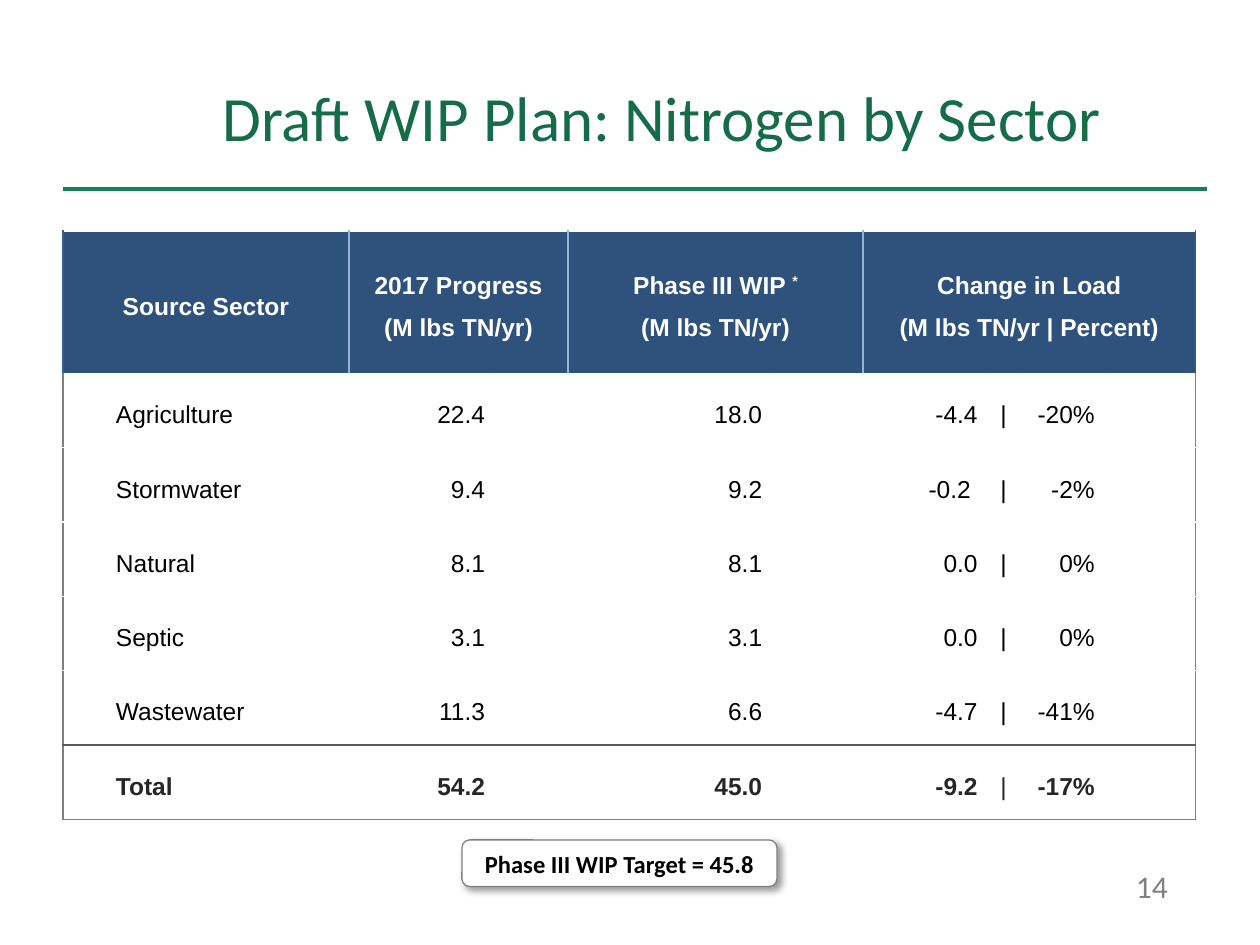
from lxml import etree
from pptx import Presentation
from pptx.dml.color import RGBColor
from pptx.enum.shapes import MSO_CONNECTOR, MSO_SHAPE
from pptx.enum.text import MSO_ANCHOR, PP_ALIGN
from pptx.oxml.ns import qn
from pptx.util import Pt

LEFT, CENTER, RIGHT = PP_ALIGN.LEFT, PP_ALIGN.CENTER, PP_ALIGN.RIGHT
MIDDLE, TOP = MSO_ANCHOR.MIDDLE, MSO_ANCHOR.TOP
STRAIGHT = MSO_CONNECTOR.STRAIGHT
ROUNDED_RECTANGLE = MSO_SHAPE.ROUNDED_RECTANGLE

WHITE = RGBColor(0xFF, 0xFF, 0xFF)
BLACK = RGBColor(0x00, 0x00, 0x00)
TITLE_GREEN = RGBColor(0x15, 0x6C, 0x48)
RULE_GREEN = RGBColor(0x18, 0x7E, 0x55)
HEADER_BLUE = RGBColor(0x2F, 0x52, 0x7D)
HEADER_EDGE = RGBColor(0x36, 0x5F, 0x91)
HEADER_DIVIDER = RGBColor(0x95, 0xB3, 0xD7)
TABLE_EDGE = RGBColor(0x7F, 0x7F, 0x7F)
TOTAL_RULE = RGBColor(0x59, 0x59, 0x59)
TOTAL_TEXT = RGBColor(0x26, 0x26, 0x26)
GRAY = RGBColor(0x80, 0x80, 0x80)

COLUMN_WIDTHS = [163.44, 81.36, 43.92, 114.48, 54, 69.12, 22.32, 47.52, 51.12]
HEADER_HEIGHT, ROW_HEIGHT = 81.36, 42.48

# First column, last column, and lines of (text, superscript) runs
HEADERS = [
    (0, 0, [[("Source Sector", False)]]),
    (1, 2, [[("2017 Progress", False)], [("(M lbs TN/yr)", False)]]),
    (3, 4, [[("Phase III WIP ", False), ("*", True)], [("(M lbs TN/yr)", False)]]),
    (5, 8, [[("Change in Load", False)], [("(M lbs TN/yr | Percent)", False)]]),
]
SECTORS = [
    ("Agriculture", "22.4", "18.0", "-4.4", "-20%"),
    ("Stormwater", "9.4", "9.2", "-0.2 ", "-2%"),
    ("Natural", "8.1", "8.1", "0.0", "0%"),
    ("Septic", "3.1", "3.1", "0.0", "0%"),
    ("Wastewater", "11.3", "6.6", "-4.7", "-41%"),
    ("Total", "54.2", "45.0", "-9.2", "-17%"),
]

# Left, top, right and bottom cell margins
CELL_MARGINS = (3.6, 8.76, 3.6, 5.76)
LABEL_MARGINS = (30.25, 8.76, 3.6, 5.76)
CHANGE_MARGINS = (6.48, 3, 6.48, 0)


class SlideBuilder:
    heading_font = "Calibri"
    table_font = "Arial"
    table_size = 14

    def __init__(self, slide):
        self.slide = slide

    def add_run(self, paragraph, text, font, size, color, bold=False):
        run = paragraph.add_run()
        run.text = text
        run.font.name = font
        run.font.size = Pt(size)
        run.font.bold = bold
        run.font.color.rgb = color
        return run

    def text(self, left, top, width, height, text, size, color, anchor=TOP):
        shape = self.slide.shapes.add_textbox(Pt(left), Pt(top), Pt(width), Pt(height))
        frame = shape.text_frame
        frame.word_wrap = True
        frame.vertical_anchor = anchor
        self.add_run(frame.paragraphs[0], text, self.heading_font, size, color)

    def rule(self, left, top, right, color, weight):
        line = self.slide.shapes.add_connector(
            STRAIGHT, Pt(left), Pt(top), Pt(right), Pt(top))
        line.line.color.rgb = color
        line.line.width = Pt(weight)
        etree.SubElement(line._element.spPr, qn("a:effectLst"))

    def callout(self, left, top, width, height, text):
        shape = self.slide.shapes.add_shape(
            ROUNDED_RECTANGLE, Pt(left), Pt(top), Pt(width), Pt(height))
        shape.fill.solid()
        shape.fill.fore_color.rgb = WHITE
        shape.line.color.rgb = GRAY
        shape.line.width = Pt(0.75)
        shape.shadow.inherit = False
        effects = shape._element.spPr.find(qn("a:effectLst"))
        shadow = etree.SubElement(
            effects, qn("a:outerShdw"), blurRad=str(Pt(4)), dist=str(Pt(3)),
            dir=str(45 * 60000), algn="tl", rotWithShape="0")
        color = etree.SubElement(shadow, qn("a:srgbClr"), val=str(BLACK))
        etree.SubElement(color, qn("a:alpha"), val="40000")
        frame = shape.text_frame
        frame.word_wrap = True
        frame.vertical_anchor = MIDDLE
        paragraph = frame.paragraphs[0]
        paragraph.alignment = CENTER
        self.add_run(paragraph, text, self.heading_font, 14, BLACK, bold=True)

    def table(self, left, top, column_widths, row_heights):
        frame = self.slide.shapes.add_table(
            len(row_heights), len(column_widths), Pt(left), Pt(top),
            Pt(sum(column_widths)), Pt(sum(row_heights)))
        table = frame.table
        table.first_row = False
        table.horz_banding = False
        for column, width in zip(table.columns, column_widths):
            column.width = Pt(width)
        for row, height in zip(table.rows, row_heights):
            row.height = Pt(height)
        return table

    def cell_style(self, cell, fill, borders):
        """Set the fill and the borders, given as side: (color, weight)."""
        properties = cell._tc.get_or_add_tcPr()
        for side in "LRTB":
            if side in borders:
                color, weight = borders[side]
                line = etree.SubElement(properties, qn(f"a:ln{side}"), w=str(Pt(weight)))
                solid = etree.SubElement(line, qn("a:solidFill"))
                etree.SubElement(solid, qn("a:srgbClr"), val=str(color))
        cell.fill.solid()
        cell.fill.fore_color.rgb = fill

    def cell_text(self, cell, lines, alignment, margins, color, bold):
        cell.vertical_anchor = MIDDLE
        (cell.margin_left, cell.margin_top,
         cell.margin_right, cell.margin_bottom) = [Pt(margin) for margin in margins]
        frame = cell.text_frame
        for index, runs in enumerate(lines):
            paragraph = frame.add_paragraph() if index else frame.paragraphs[0]
            paragraph.alignment = alignment
            paragraph.line_spacing = 1.15
            paragraph.space_after = Pt(3)
            if index:
                paragraph.space_before = Pt(3)
            for text, superscript in runs:
                run = self.add_run(
                    paragraph, text, self.table_font, self.table_size, color, bold)
                if superscript:
                    run._r.get_or_add_rPr().set("baseline", "30000")


def fill_header(builder, table):
    last_column = len(COLUMN_WIDTHS) - 1
    for first, last, lines in HEADERS:
        borders = {
            "L": (HEADER_DIVIDER if first else HEADER_EDGE, 1),
            "R": (HEADER_EDGE if last == last_column else HEADER_DIVIDER, 1),
            "T": (WHITE, 1),
            "B": (WHITE, 1),
        }
        for column in range(first, last + 1):
            builder.cell_style(table.cell(0, column), HEADER_BLUE, borders)
        cell = table.cell(0, first)
        if last > first:
            cell.merge(table.cell(0, last))
        builder.cell_text(cell, lines, CENTER, CELL_MARGINS, WHITE, True)


def fill_sector(builder, table, row, sector):
    total_row, last_column = len(SECTORS), len(COLUMN_WIDTHS) - 1
    is_total = row == total_row
    color = TOTAL_TEXT if is_total else BLACK
    for column in range(last_column + 1):
        borders = {}
        if column == 0:
            borders["L"] = (TABLE_EDGE, 1)
        if column == last_column:
            borders["R"] = (TABLE_EDGE, 1)
        if row == 1:
            borders["T"] = (WHITE, 1)
        if row == total_row - 1:
            borders["B"] = (TOTAL_RULE, 1.5)
        if is_total:
            borders.update(T=(TOTAL_RULE, 1.5), B=(TABLE_EDGE, 1))
        builder.cell_style(table.cell(row, column), WHITE, borders)

    label, progress, plan, change, percent = sector
    for column, text, alignment, margins, bold in [
        (0, label, LEFT, LABEL_MARGINS, is_total),
        (1, progress, RIGHT, CELL_MARGINS, is_total),
        (3, plan, RIGHT, CELL_MARGINS, is_total),
        (5, change, RIGHT, CELL_MARGINS, is_total),
        (6, "|", CENTER, CHANGE_MARGINS, False),
        (7, percent, RIGHT, CHANGE_MARGINS, is_total),
    ]:
        builder.cell_text(
            table.cell(row, column), [[(text, False)]], alignment, margins, color, bold)


def main():
    presentation = Presentation()
    presentation.slide_width, presentation.slide_height = Pt(720), Pt(540)
    builder = SlideBuilder(presentation.slides.add_slide(presentation.slide_layouts[6]))

    builder.rule(36, 108, 690, RULE_GREEN, 2.25)
    builder.text(642, 492, 60, 29, "14", 18, GRAY)
    builder.text(120, 21.6, 564, 90, "Draft WIP Plan: Nitrogen by Sector",
                 36, TITLE_GREEN, MIDDLE)
    table = builder.table(
        36, 132, COLUMN_WIDTHS, [HEADER_HEIGHT] + [ROW_HEIGHT] * len(SECTORS))
    fill_header(builder, table)
    for row, sector in enumerate(SECTORS, start=1):
        fill_sector(builder, table, row, sector)
    builder.callout(264, 480, 180, 26.64, "Phase III WIP Target = 45.8")

    presentation.save("out.pptx")


if __name__ == "__main__":
    main()
